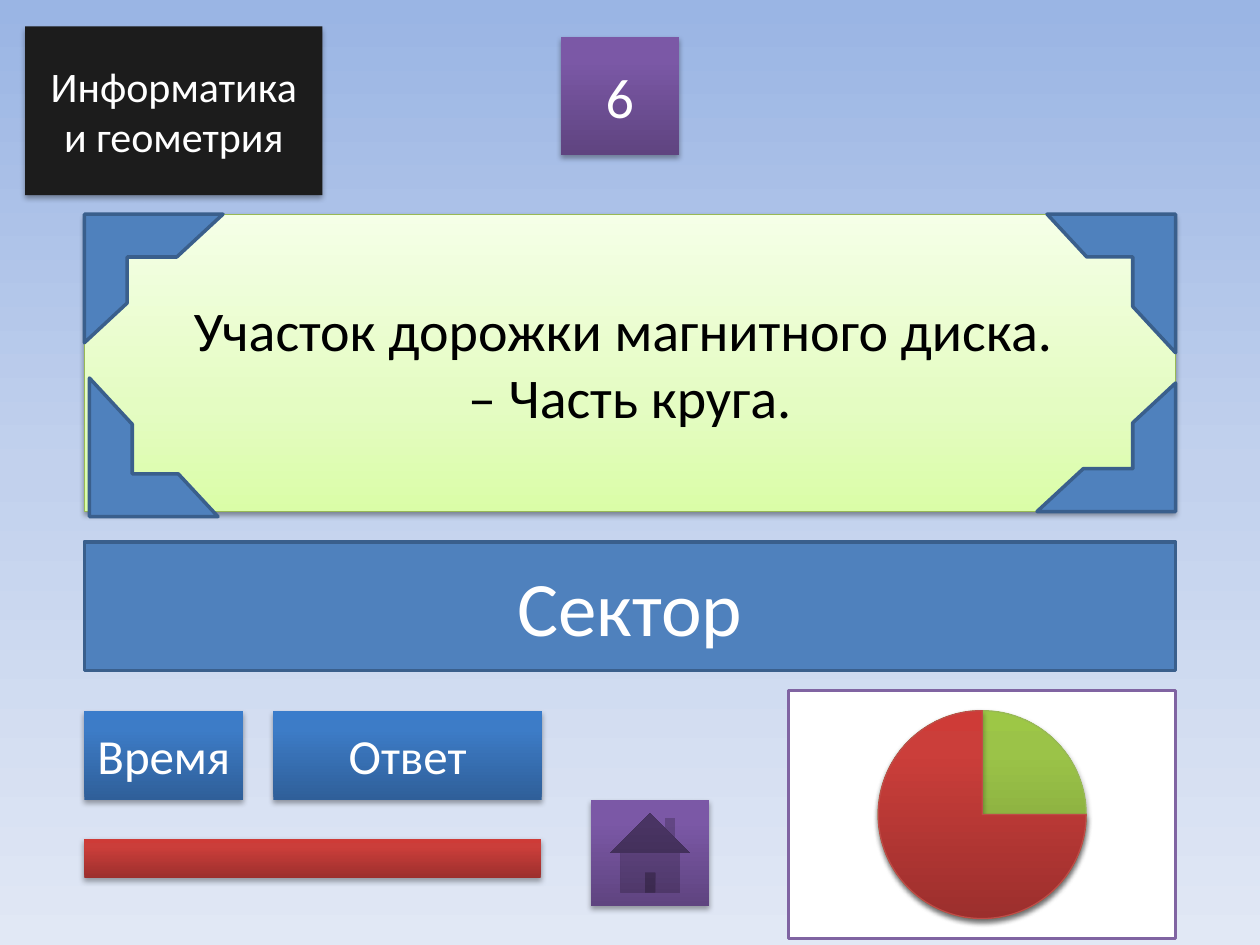
from pptx import Presentation
from pptx.dml.color import RGBColor
from pptx.enum.shapes import MSO_SHAPE as Preset
from pptx.enum.text import MSO_ANCHOR as Anchor, MSO_AUTO_SIZE as AutoSize, PP_ALIGN as Align
from pptx.oxml import parse_xml
from pptx.oxml.ns import nsdecls, qn
from pptx.util import Inches, Pt

BLUE, WHITE = "4F81BD", "FFFFFF"
BLUE_EDGE = ("3A5F8C", 2)
GREEN_EDGE = ("98B955", 0.75)
# Gradient stops run from the bottom edge upwards
SKY = [(0, "E1E8F5"), (50, "C2D1ED"), (100, "9AB5E4")]
LIME = [(0, "DAFDA7"), (35, "E4FCC2"), (100, "F5FFE7")]
PURPLE = [(0, "5F4480"), (80, "7B58A6"), (100, "7C57A8")]
AZURE = [(0, "2F5F99"), (80, "3D7CC7"), (100, "3A7CCB")]
RED = [(0, "9C2F2D"), (80, "CB3E3A"), (100, "CE3B37")]
GREEN = [(0, "779737"), (80, "9BC348"), (100, "9DC746")]


def style(shape, fill, edge=None, shadow=None):
    """Set a solid or gradient fill, an outline and a shadow of given opacity."""
    if isinstance(fill, str):
        shape.fill.solid()
        shape.fill.fore_color.rgb = RGBColor.from_string(fill)
    else:
        shape.fill.gradient()
        shape.fill.gradient_angle = 90
        stops = "".join(f'<a:gs pos="{pos * 1000}"><a:srgbClr val="{color}"/></a:gs>'
                        for pos, color in fill)
        old_stops = shape._element.spPr.find(qn("a:gradFill")).find(qn("a:gsLst"))
        old_stops.getparent().replace(
            old_stops, parse_xml(f'<a:gsLst {nsdecls("a")}>{stops}</a:gsLst>'))
    if edge:
        shape.line.color.rgb = RGBColor.from_string(edge[0])
        shape.line.width = Pt(edge[1])
    else:
        shape.line.fill.background()
    shape.shadow.inherit = False
    if shadow:
        shape._element.spPr.find(qn("a:effectLst")).append(parse_xml(
            f'<a:outerShdw {nsdecls("a")} blurRad="40000" dist="23000" dir="5400000" '
            f'rotWithShape="0"><a:srgbClr val="000000"><a:alpha val="{shadow * 1000}"/>'
            '</a:srgbClr></a:outerShdw>'))


def write(shape, lines, size, color=WHITE):
    frame = shape.text_frame
    frame.word_wrap = True
    frame.auto_size = AutoSize.NONE
    frame.vertical_anchor = Anchor.MIDDLE
    para = frame.paragraphs[0]
    para.alignment = Align.CENTER
    for number, line in enumerate(lines):
        if number:
            para.add_line_break()
        span = para.add_run()
        span.text = line
        span.font.name = "Calibri"
        span.font.size = Pt(size)
        span.font.color.rgb = RGBColor.from_string(color)


deck = Presentation()
deck.slide_width, deck.slide_height = Inches(10), Inches(7.5)
page = deck.slides.add_slide(deck.slide_layouts[5])

backdrop = page.shapes.add_shape(Preset.RECTANGLE, 0, 0, Inches(10), Inches(7.5))
style(backdrop, SKY, shadow=35)

question = page.shapes.title
question._element.addprevious(backdrop._element)
question.left, question.top = Inches(0.67), Inches(1.7)
question.width, question.height = Inches(8.66), Inches(2.36)
style(question, LIME, GREEN_EDGE, 38)
write(question, ["Участок дорожки магнитного диска. ", "– Часть круга."], 32, "000000")

# preset, (left, top, width, height), fill, edge, shadow, text, text size
panels = [
    (Preset.RECTANGLE, (0.67, 4.3, 8.66, 1.02), BLUE, BLUE_EDGE, None, "Сектор", 44),
    (Preset.RECTANGLE, (4.45, 0.29, 0.94, 0.94), PURPLE, None, 35, "6", 32),
    (Preset.ACTION_BUTTON_HOME, (4.69, 6.35, 0.94, 0.84), PURPLE, None, 35, None, 0),
    (Preset.RECTANGLE, (2.17, 5.64, 2.13, 0.71), AZURE, None, 35, "Ответ", 28),
    (Preset.RECTANGLE, (0.2, 0.21, 2.36, 1.34), "1C1C1C", None, 35,
     "Информатика и геометрия", 24),
    (Preset.RECTANGLE, (0.67, 5.64, 1.26, 0.71), AZURE, None, 35, "Время", 28),
    (Preset.RECTANGLE, (0.67, 6.66, 3.62, 0.31), RED, None, 35, None, 0),
    (Preset.RECTANGLE, (6.26, 5.48, 3.07, 1.97), WHITE, ("8064A2", 2), None, None, 0),
]
for preset, place, fill, edge, shadow, text, size in panels:
    panel = page.shapes.add_shape(preset, *map(Inches, place))
    style(panel, fill, edge, shadow)
    if text:
        write(panel, [text], size)

corners = page.shapes.add_group_shape()
for left, top, turn in [(0.67, 1.7, 0), (0.67, 3.04, 270), (8.27, 1.74, 90), (8.23, 3.04, 180)]:
    corner = corners.shapes.add_shape(
        Preset.HALF_FRAME, Inches(left), Inches(top), Inches(1.1), Inches(1.02))
    corner.rotation = turn
    style(corner, BLUE, BLUE_EDGE)

circle = page.shapes.add_group_shape()
for preset, fill, edge in [(Preset.OVAL, GREEN, GREEN_EDGE), (Preset.PIE, RED, ("BF4C48", 0.75))]:
    part = circle.shapes.add_shape(
        preset, Inches(6.97), Inches(5.64), Inches(1.65), Inches(1.65))
    style(part, fill, edge, 35)

deck.save("out.pptx")
